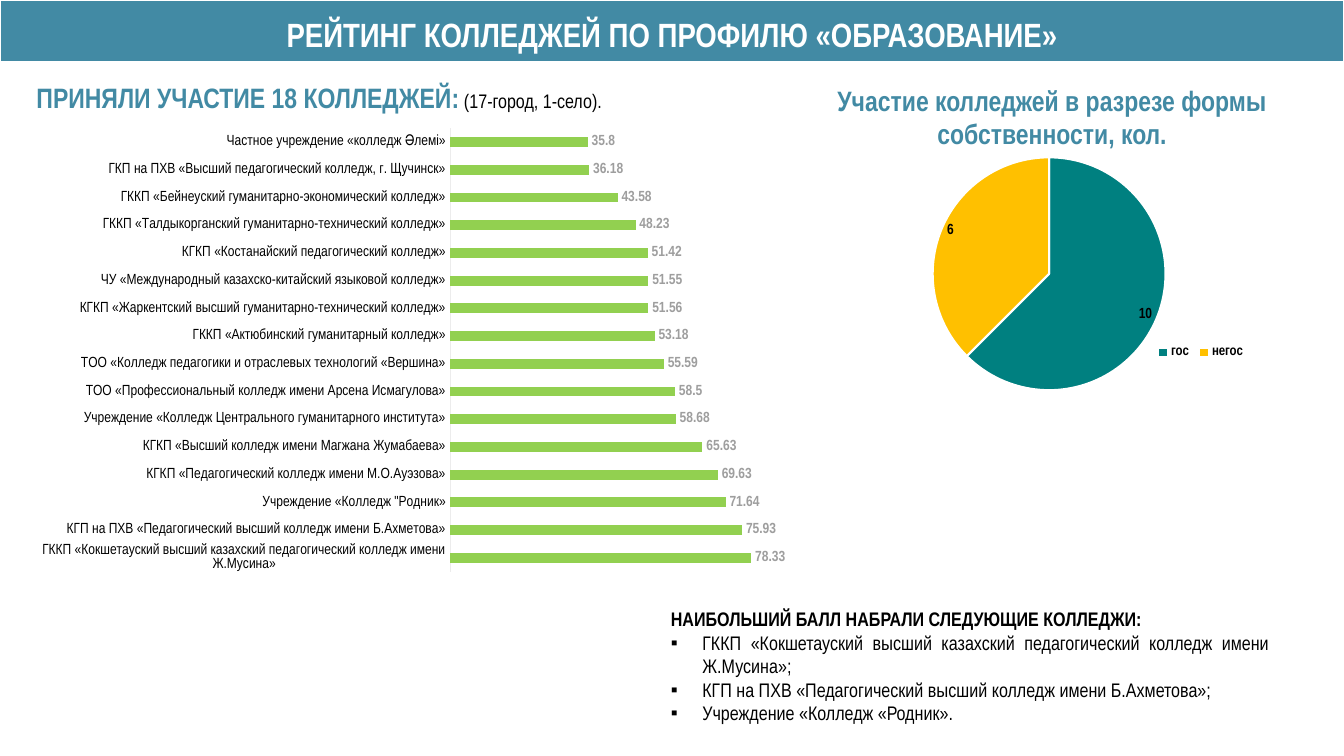
from lxml import etree
from pptx import Presentation
from pptx.chart.data import CategoryChartData
from pptx.dml.color import RGBColor
from pptx.enum.chart import XL_CHART_TYPE, XL_LABEL_POSITION, XL_LEGEND_POSITION, XL_TICK_MARK
from pptx.enum.shapes import MSO_SHAPE
from pptx.enum.text import MSO_ANCHOR, MSO_AUTO_SIZE, PP_ALIGN
from pptx.oxml.ns import qn
from pptx.util import Pt

BAR, PIE = XL_CHART_TYPE.BAR_CLUSTERED, XL_CHART_TYPE.PIE
OUT, BEST = XL_LABEL_POSITION.OUTSIDE_END, XL_LABEL_POSITION.BEST_FIT
BOTTOM, NO_TICK = XL_LEGEND_POSITION.BOTTOM, XL_TICK_MARK.NONE
LEFT, CENTER, JUST = PP_ALIGN.LEFT, PP_ALIGN.CENTER, PP_ALIGN.JUSTIFY
TOP, GROW, RECT = MSO_ANCHOR.TOP, MSO_AUTO_SIZE.SHAPE_TO_FIT_TEXT, MSO_SHAPE.RECTANGLE

FONT = "Arial Narrow"
TEAL, WHITE, BLACK, GRAY = "428AA4", "FFFFFF", "000000", "9E9E9E"
GREEN, AXIS = "92D050", "ECECEC"
WIDE, HIGH = 960, 540

TITLE = "РЕЙТИНГ КОЛЛЕДЖЕЙ ПО ПРОФИЛЮ «ОБРАЗОВАНИЕ»"
COUNT = ("ПРИНЯЛИ УЧАСТИЕ 18 КОЛЛЕДЖЕЙ:", " (17-город, 1-село).")
SHARE = "Участие колледжей в разрезе формы собственности, кол."
BEST_HEAD = "НАИБОЛЬШИЙ БАЛЛ НАБРАЛИ СЛЕДУЮЩИЕ КОЛЛЕДЖИ:"
WINNERS = [
    "ГККП «Кокшетауский высший казахский педагогический колледж имени Ж.Мусина»;",
    "КГП на ПХВ «Педагогический высший колледж имени Б.Ахметова»;",
    "Учреждение «Колледж «Родник».",
]
SCORES = [
    ("ГККП «Кокшетауский высший казахский педагогический колледж имени Ж.Мусина»", 78.33),
    ("КГП на ПХВ «Педагогический высший колледж имени Б.Ахметова»", 75.93),
    ("Учреждение «Колледж \"Родник»", 71.64),
    ("КГКП «Педагогический колледж имени М.О.Ауэзова»", 69.63),
    ("КГКП «Высший колледж имени Магжана Жумабаева»", 65.63),
    ("Учреждение «Колледж Центрального гуманитарного института»", 58.68),
    ("ТОО «Профессиональный колледж имени Арсена Исмагулова»", 58.5),
    ("ТОО «Колледж педагогики и отраслевых технологий «Вершина»", 55.59),
    ("ГККП «Актюбинский гуманитарный колледж»", 53.18),
    ("КГКП «Жаркентский высший гуманитарно-технический колледж»", 51.56),
    ("ЧУ «Международный казахско-китайский языковой колледж»", 51.55),
    ("КГКП «Костанайский педагогический колледж»", 51.42),
    ("ГККП «Талдыкорганский гуманитарно-технический колледж»", 48.23),
    ("ГККП «Бейнеуский гуманитарно-экономический колледж»", 43.58),
    ("ГКП на ПХВ «Высший педагогический колледж, г. Щучинск»", 36.18),
    ("Частное учреждение «колледж Әлемі»", 35.8),
]
OWNERS = [("гос", 10), ("негос", 6)]
SLICES = ["008080", "FFC000"]


def color(code):
    return RGBColor.from_string(code)


def paint(shape, code):
    shape.fill.solid()
    shape.fill.fore_color.rgb = color(code)


def style(font, size, code, bold=False):
    font.name, font.size, font.bold = FONT, Pt(size), bold
    font.color.rgb = color(code)


def place(shape, box):
    shape.left, shape.top, shape.width, shape.height = map(Pt, box)


def write(para, parts, align=LEFT):
    para.alignment = align
    para.space_before = Pt(0)
    for text, size, code, bold in parts:
        run = para.add_run()
        run.text = text
        style(run.font, size, code, bold)


def label(box, parts, align=LEFT):
    frame = slide.shapes.add_textbox(*map(Pt, box)).text_frame
    frame.word_wrap = True
    frame.auto_size = GROW
    write(frame.paragraphs[0], parts, align)


def bullet(para, mark=None, indent=0):
    props = para._p.get_or_add_pPr()
    props.set("marL", str(Pt(indent)))
    props.set("indent", str(-Pt(indent)))
    if mark:
        etree.SubElement(props, qn("a:buFont")).set("typeface", "Arial")
        etree.SubElement(props, qn("a:buChar")).set("char", mark)
    else:
        etree.SubElement(props, qn("a:buNone"))


def pin(part, spot, box, inner=False):
    for old in part.findall(qn("c:layout")):
        part.remove(old)
    layout = etree.Element(qn("c:layout"))
    part.insert(spot, layout)
    manual = etree.SubElement(layout, qn("c:manualLayout"))
    rules = [("layoutTarget", "inner")] if inner else []
    rules += [("xMode", "edge"), ("yMode", "edge"), *zip("xywh", map(str, box))]
    for name, value in rules:
        etree.SubElement(manual, qn("c:" + name)).set("val", value)


def chart(kind, box, rows, area, spot, code):
    data = CategoryChartData()
    data.categories = [name for name, value in rows]
    data.add_series("Series 1", [value for name, value in rows])
    made = slide.shapes.add_chart(kind, *map(Pt, box), data).chart
    made.has_title = made.has_legend = False
    style(made.font, 10, BLACK)
    plot = made.plots[0]
    plot.has_data_labels = True
    marks = plot.data_labels
    marks.show_value = True
    marks.position = spot
    style(marks.font, 10.5, code, True)
    pin(made._chartSpace.chart.plotArea, 0, area, True)
    return made, plot


prs = Presentation()
prs.slide_width, prs.slide_height = Pt(WIDE), Pt(HIGH)
slide = prs.slides.add_slide(prs.slide_layouts[1])
head, body = slide.placeholders

band = slide.shapes.add_shape(RECT, 0, 0, Pt(WIDE), Pt(44))
band.shadow.inherit = False
paint(band, TEAL)
band.line.color.rgb = color(WHITE)
band.line.width = Pt(1)
slide.shapes._spTree.insert(2, band._element)

place(head, (0, 13, WIDE, 26))
frame = head.text_frame
frame.margin_left = frame.margin_right = frame.margin_top = frame.margin_bottom = 0
frame.vertical_anchor = TOP
frame.auto_size = GROW
write(frame.paragraphs[0], [(TITLE, 24, WHITE, True)], CENTER)
frame.paragraphs[0].line_spacing = 0.9

pie, plot = chart(PIE, (594, 102, 314, 208), OWNERS, (0.23, 0.05, 0.53, 0.8), BEST, BLACK)
plot.vary_by_categories = True
for i, code in enumerate(SLICES):
    part = plot.series[0].points[i].format
    paint(part, code)
    part.line.color.rgb = color(WHITE)
    part.line.width = Pt(1.5)
pie.has_legend = True
pie.legend.position = BOTTOM
pie.legend.include_in_layout = False
style(pie.legend.font, 10, BLACK, True)
pin(pie.legend._element, 1, (0.73, 0.68, 0.22, 0.08))

label((580, 56, 343, 55), [(SHARE, 20, TEAL, True)], CENTER)
label((19, 54, 454, 48), [(COUNT[0], 20, TEAL, True), (COUNT[1], 14, BLACK, False)])

place(body, (472, 430, 442, 92))
frame = body.text_frame
frame.auto_size = GROW
write(frame.paragraphs[0], [(BEST_HEAD, 14, BLACK, True)])
bullet(frame.paragraphs[0])
for text in WINNERS:
    para = frame.add_paragraph()
    write(para, [(text, 14, BLACK, False)], JUST)
    bullet(para, "▪", 22.5)

bars, plot = chart(BAR, (18, 85, 562, 330), SCORES, (0.54, 0.02, 0.44, 0.96), OUT, GRAY)
plot.gap_width = 182
plot.vary_by_categories = False
paint(plot.series[0].format, GREEN)
names, scale = bars.category_axis, bars.value_axis
names.major_tick_mark = names.minor_tick_mark = NO_TICK
names.has_major_gridlines = scale.has_major_gridlines = False
style(names.tick_labels.font, 10.5, BLACK)
names.format.line.color.rgb = color(AXIS)
names.format.line.width = Pt(0.75)
scale.minimum_scale, scale.maximum_scale = 0, 90
scale.visible = False

prs.save("out.pptx")
